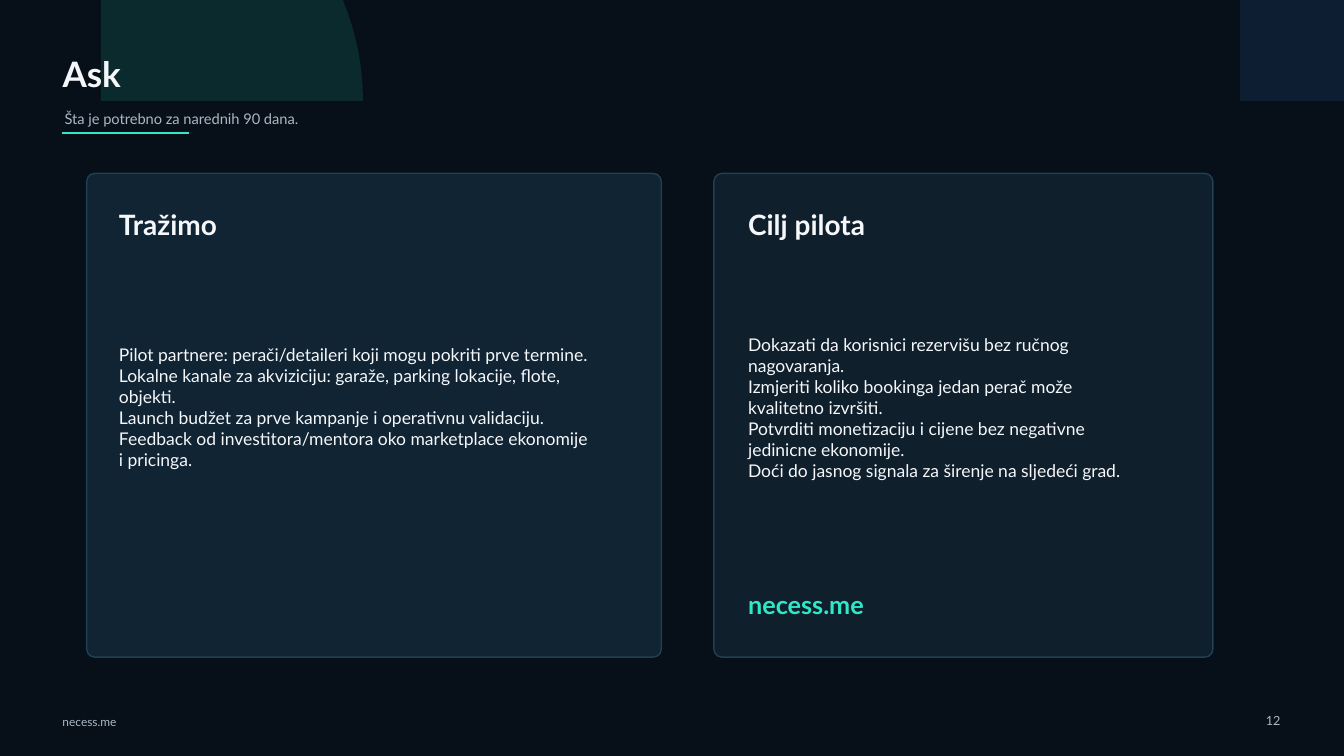
"""Build the "Ask" slide: two cards with pilot needs and pilot goals."""
import pptx
import pptx.util
import pptx.dml.color
import pptx.enum.shapes
import pptx.enum.text
import pptx.oxml
import pptx.oxml.ns

RGB = pptx.dml.color.RGBColor
SHAPE = pptx.enum.shapes.MSO_SHAPE
ALIGN = pptx.enum.text.PP_ALIGN

NAVY = RGB(0x07, 0x10, 0x18)
TEAL = RGB(0x2E, 0xE8, 0xC8)
BLUE = RGB(0x3B, 0x82, 0xF6)
WHITE = RGB(0xF5, 0xF7, 0xFA)
GREY = RGB(0xA9, 0xB7, 0xC6)
EDGE = RGB(0x25, 0x47, 0x5C)
CARD_BLUE = RGB(0x10, 0x24, 0x34)
CARD_DARK = RGB(0x0F, 0x1F, 0x2C)

EMU_PER_PX = 9144
WIDTH, HEIGHT = 1333, 750
CARD_TOP, CARD_HEIGHT = 172, 480

TITLE = ("Ask", (62, 45, 840, 55), 25, WHITE, True)
ARCS = [((-160, -160, 520, 520), TEAL), ((950, -180, 560, 560), BLUE)]
RULE = (62, 132, 187, 132)
LABELS = [
    ("Šta je potrebno za narednih 90 dana.", (64, 100, 860, 36), 10.5, GREY, False, ALIGN.LEFT),
    ("necess.me", (62, 705, 140, 22), 8.5, GREY, False, ALIGN.LEFT),
    ("12", (1225, 702, 45, 25), 9, GREY, False, ALIGN.RIGHT),
]
CARDS = [
    {"x": 86, "width": 570, "text_x": 118, "text_width": 465, "fill": CARD_BLUE,
     "heading": "Tražimo",
     "body": [
         "Pilot partnere: perači/detaileri koji mogu pokriti prve termine.",
         "Lokalne kanale za akviziciju: garaže, parking lokacije, flote, objekti.",
         "Launch budžet za prve kampanje i operativnu validaciju.",
         "Feedback od investitora/mentora oko marketplace ekonomije i pricinga.",
     ]},
    {"x": 708, "width": 495, "text_x": 742, "text_width": 390, "fill": CARD_DARK,
     "heading": "Cilj pilota",
     "body": [
         "Dokazati da korisnici rezervišu bez ručnog nagovaranja.",
         "Izmjeriti koliko bookinga jedan perač može kvalitetno izvršiti.",
         "Potvrditi monetizaciju i cijene bez negativne jedinicne ekonomije.",
         "Doći do jasnog signala za širenje na sljedeći grad.",
     ]},
]
SIGNATURE = ("necess.me", (742, 582, 220, 35), 18, TEAL, True)


def emu(box):
    return [pptx.util.Emu(v * EMU_PER_PX) for v in box]


def set_alpha(color_format, percent):
    color = color_format._xFill.find(pptx.oxml.ns.qn("a:srgbClr"))
    alpha = color.makeelement(pptx.oxml.ns.qn("a:alpha"), {"val": str(percent * 1000)})
    color.append(alpha)


def add_shape(s, kind, box, fill, alpha=100):
    sp = s.shapes.add_shape(kind, *emu(box))
    sp.shadow.inherit = False
    sp.fill.solid()
    sp.fill.fore_color.rgb = fill
    sp.line.fill.background()
    if alpha < 100:
        set_alpha(sp.fill.fore_color, alpha)
    return sp


def write(sp, lines, size, color, bold, align=ALIGN.LEFT):
    tf = sp.text_frame
    frame = {"word_wrap": True, "auto_size": pptx.enum.text.MSO_AUTO_SIZE.NONE,
             "vertical_anchor": pptx.enum.text.MSO_ANCHOR.MIDDLE,
             "margin_left": 0, "margin_top": 0, "margin_right": 0, "margin_bottom": 0}
    for name, value in frame.items():
        setattr(tf, name, value)
    for i, line in enumerate(lines):
        p = tf.add_paragraph() if i else tf.paragraphs[0]
        p.alignment = align
        r = p.add_run()
        r.text = line
        font = {"name": "Lato", "size": pptx.util.Pt(size), "bold": bold}
        for name, value in font.items():
            setattr(r.font, name, value)
        r.font.color.rgb = color


def add_text(s, lines, box, *style):
    write(s.shapes.add_textbox(*emu(box)), lines, *style)


def add_title(s):
    text, box, *style = TITLE
    sp = s.shapes.title
    sp.left, sp.top, sp.width, sp.height = emu(box)
    write(sp, [text], *style)
    sp.element.getparent().append(sp.element)


def add_rule(s):
    sp = s.shapes.add_connector(pptx.enum.shapes.MSO_CONNECTOR.STRAIGHT, *emu(RULE))
    sp.line.color.rgb = TEAL
    sp.line.width = pptx.util.Pt(2)
    props = sp.element.spPr
    props.append(props.makeelement(pptx.oxml.ns.qn("a:effectLst"), {}))


def add_card(s, card):
    sp = add_shape(s, SHAPE.ROUNDED_RECTANGLE,
                   (card["x"], CARD_TOP, card["width"], CARD_HEIGHT), card["fill"])
    sp.adjustments[0] = 0.017
    sp.line.color.rgb = EDGE
    sp.line.width = pptx.util.Pt(1)
    set_alpha(sp.line.color, 85)
    x = card["text_x"]
    add_text(s, [card["heading"]], (x, CARD_TOP + 33, 240, 35), 20, WHITE, True)
    add_text(s, card["body"], (x, CARD_TOP + 96, card["text_width"], 272), 12.5, WHITE, False)


def main():
    prs = pptx.Presentation()
    prs.slide_width, prs.slide_height = emu((WIDTH, HEIGHT))
    s = prs.slides.add_slide(prs.slide_layouts[5])
    s.background.fill.solid()
    s.background.fill.fore_color.rgb = NAVY

    backdrop = add_shape(s, SHAPE.RECTANGLE, (0, 0, WIDTH, HEIGHT), NAVY)
    backdrop.line.color.rgb = NAVY
    backdrop.line.width = pptx.util.Pt(1)
    for box, color in ARCS:
        add_shape(s, SHAPE.ARC, box, color, 12)
    add_title(s)
    add_rule(s)
    for text, box, *style in LABELS:
        add_text(s, [text], box, *style)
    for card in CARDS:
        add_card(s, card)
    text, box, *style = SIGNATURE
    add_text(s, [text], box, *style)
    prs.save("out.pptx")


if __name__ == "__main__":
    main()
